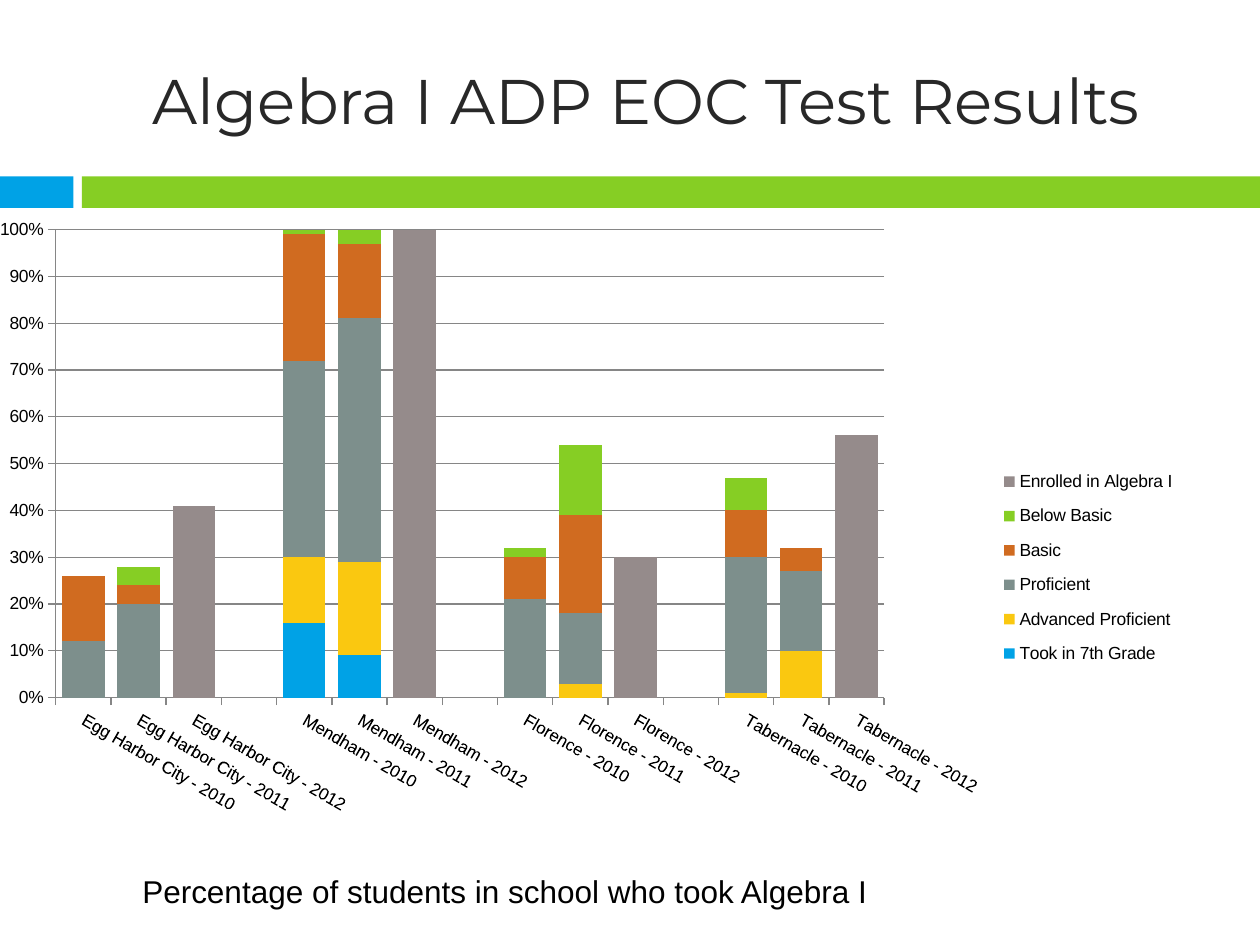
"""Builds the Algebra I ADP EOC test results slide with a stacked column chart."""
import lxml.etree
import pptx
import pptx.chart.data
import pptx.dml.color
import pptx.enum.chart
import pptx.enum.shapes
import pptx.enum.text
import pptx.oxml.ns
import pptx.util

Pt = pptx.util.Pt
qn = pptx.oxml.ns.qn

COLOURS = {
    "blue": "00A2E6", "yellow": "FAC810", "slate": "7D8F8C", "orange": "D06B20",
    "green": "86CE24", "taupe": "958B8B", "title": "282828", "black": "000000",
    "grid": "868686",
}
TITLE = "Algebra I ADP EOC Test Results"
CAPTION = "Percentage of students in school who took Algebra I"
SCHOOLS = ["Egg Harbor City", "Mendham", "Florence", "Tabernacle"]
YEARS = [2010, 2011, 2012]
LEVELS = [
    ("Took in 7th Grade", "blue", [(0, 0), (0.16, 0.09), (0, 0), (0, 0)]),
    ("Advanced Proficient", "yellow", [(0, 0), (0.14, 0.2), (0, 0.03), (0.01, 0.1)]),
    ("Proficient", "slate", [(0.12, 0.2), (0.42, 0.52), (0.21, 0.15), (0.29, 0.17)]),
    ("Basic", "orange", [(0.14, 0.04), (0.27, 0.16), (0.09, 0.21), (0.1, 0.05)]),
    ("Below Basic", "green", [(0, 0.04), (0.02, 0.04), (0.02, 0.15), (0.07, 0)]),
]
ENROLLED = ("Enrolled in Algebra I", "taupe", [0.41, 1, 0.3, 0.56])
BANDS = [("blue", 0, 42), ("green", 46.8, 673.2)]
BAND_TOP, BAND_HEIGHT = 100.8, 18
PLOT_AREA = {"x": 0.04, "y": 0.02, "w": 0.69, "h": 0.72}
LEGEND_AREA = {"x": 0.83, "y": 0.37, "w": 0.14, "h": 0.34}


def rgb(name):
    return pptx.dml.color.RGBColor.from_string(COLOURS[name])


def style(font, family, size, colour):
    font.name, font.size = family, Pt(size)
    font.color.rgb = rgb(colour)


def join_groups(groups):
    joined = []
    for group in groups:
        joined += ([None] if joined else []) + list(group)
    return joined


def place(parent, index, area, inner=False):
    for old in parent.findall(qn("c:layout")):
        parent.remove(old)
    layout = lxml.etree.Element(qn("c:layout"))
    manual = lxml.etree.SubElement(layout, qn("c:manualLayout"))
    settings = [("layoutTarget", "inner")] if inner else []
    settings += [("xMode", "edge"), ("yMode", "edge"), *area.items()]
    for tag, value in settings:
        lxml.etree.SubElement(manual, qn(f"c:{tag}")).set("val", str(value))
    parent.insert(index, layout)


def add_bands(slide):
    for colour, left, width in BANDS:
        band = slide.shapes.add_shape(
            pptx.enum.shapes.MSO_SHAPE.RECTANGLE,
            Pt(left), Pt(BAND_TOP), Pt(width), Pt(BAND_HEIGHT))
        band.shadow.inherit = False
        band.fill.solid()
        band.fill.fore_color.rgb = rgb(colour)
        band.line.fill.background()


def add_title(slide):
    title = slide.shapes.title
    title.left, title.top, title.width, title.height = Pt(48.2), Pt(18), Pt(642.2), Pt(77.8)
    title.text_frame.vertical_anchor = pptx.enum.text.MSO_ANCHOR.MIDDLE
    paragraph = title.text_frame.paragraphs[0]
    paragraph.alignment = pptx.enum.text.PP_ALIGN.CENTER
    run = paragraph.add_run()
    run.text = TITLE
    style(run.font, "Montserrat", 36, "title")


def add_results(slide):
    results = pptx.chart.data.CategoryChartData(number_format="0%")
    results.categories = [label or "" for label in join_groups(
        [f"{school} - {year}" for year in YEARS] for school in SCHOOLS)]
    for name, _, pairs in LEVELS:
        results.add_series(name, join_groups((*pair, None) for pair in pairs))
    results.add_series(ENROLLED[0], join_groups((None, None, share) for share in ENROLLED[2]))

    chart = slide.shapes.add_chart(
        pptx.enum.chart.XL_CHART_TYPE.COLUMN_STACKED,
        Pt(0), Pt(123.8), Pt(690.5), Pt(371.5), results).chart
    style(chart.font, "Arial", 10, "black")
    chart.has_title = False

    columns = chart.plots[0]
    columns.gap_width, columns.overlap = 30, 100
    columns.vary_by_categories = False
    for series, (_, colour, _) in zip(columns.series, [*LEVELS, ENROLLED]):
        series.format.fill.solid()
        series.format.fill.fore_color.rgb = rgb(colour)
        series.invert_if_negative = False

    schools, share = chart.category_axis, chart.value_axis
    share.minimum_scale, share.maximum_scale, share.major_unit = 0, 1, 0.1
    share.has_major_gridlines = True
    share.tick_labels.number_format = "0%"
    share.tick_labels.number_format_is_linked = False
    for axis in (schools, share):
        axis.major_tick_mark = pptx.enum.chart.XL_TICK_MARK.OUTSIDE
        style(axis.tick_labels.font, "Arial", 10, "black")
    for line in (schools.format.line, share.format.line, share.major_gridlines.format.line):
        line.color.rgb, line.width = rgb("grid"), Pt(0.75)
    schools._element.find(f"{qn('c:txPr')}/{qn('a:bodyPr')}").set("rot", "1800000")

    chart.has_legend = True
    chart.legend.position = pptx.enum.chart.XL_LEGEND_POSITION.RIGHT
    chart.legend.include_in_layout = False
    style(chart.legend.font, "Arial", 10, "black")
    place(chart.legend._element, 1, LEGEND_AREA)
    place(chart._chartSpace.chart.plotArea, 0, PLOT_AREA, inner=True)


def add_caption(slide):
    caption = slide.shapes.add_textbox(Pt(74.2), Pt(494.6), Pt(576.7), Pt(28.8)).text_frame
    caption.word_wrap = True
    run = caption.paragraphs[0].add_run()
    run.text = CAPTION
    style(run.font, "Arial", 18, "black")


def main():
    deck = pptx.Presentation()
    deck.slide_width, deck.slide_height = Pt(720), Pt(540)
    slide = deck.slides.add_slide(deck.slide_layouts[5])
    add_bands(slide)
    add_title(slide)
    add_results(slide)
    add_caption(slide)
    deck.save("out.pptx")


if __name__ == "__main__":
    main()
